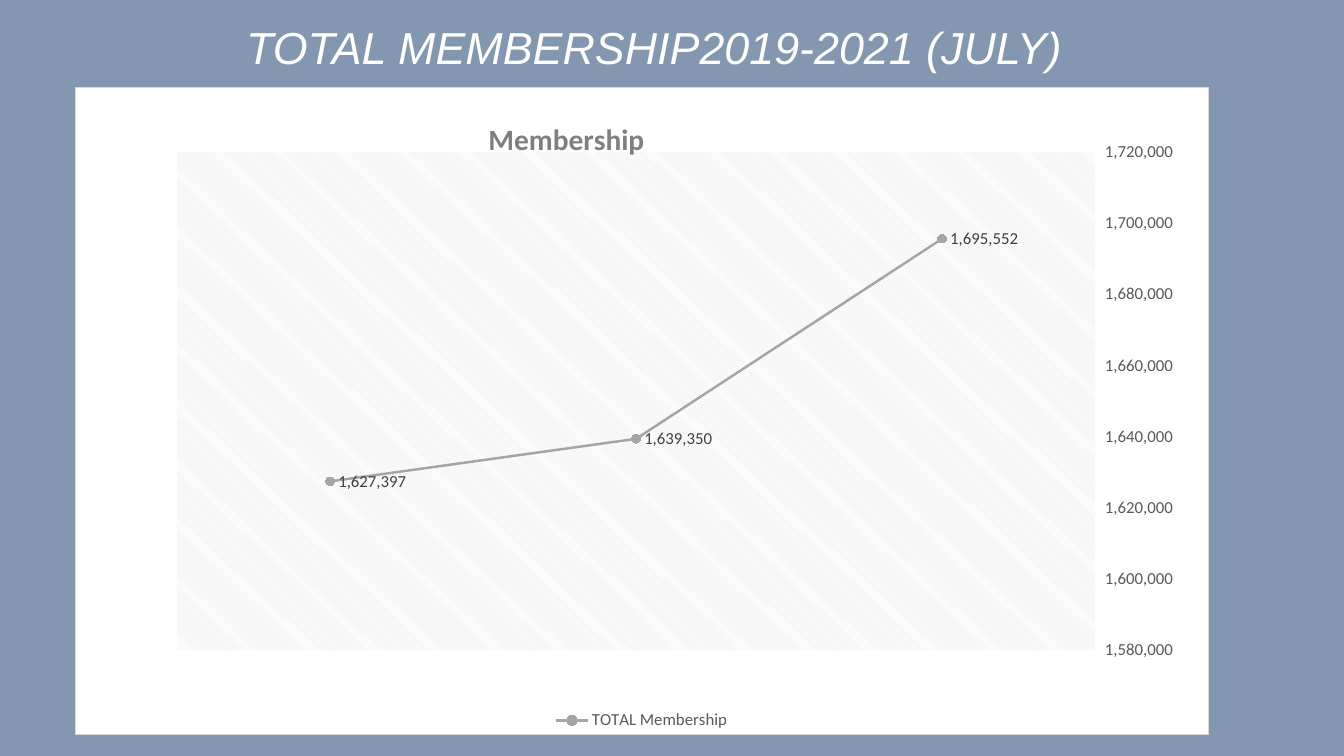
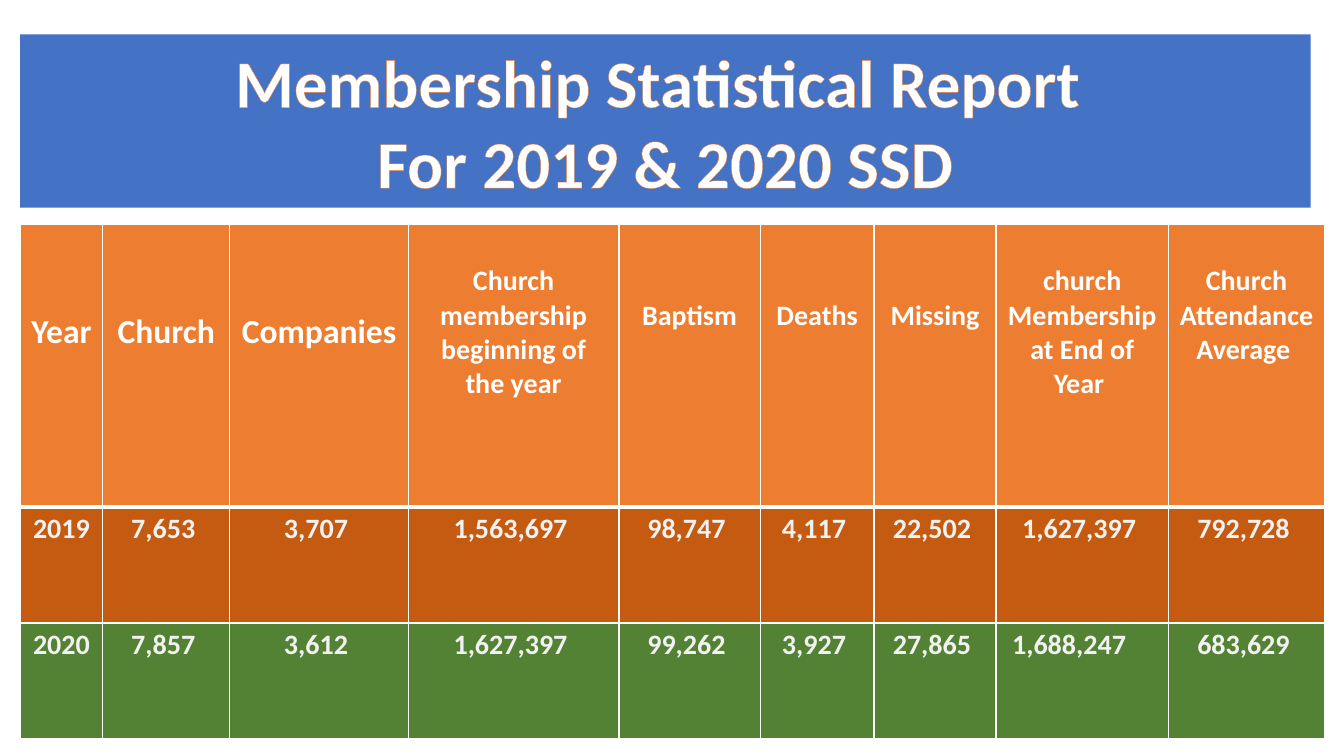
"""Builds two slides on church membership: a line chart and a table."""
import lxml.etree
import pptx
import pptx.chart.data
import pptx.dml.color
import pptx.enum.chart
import pptx.enum.text
import pptx.oxml
import pptx.oxml.ns
import pptx.util

Inches = pptx.util.Inches
Pt = pptx.util.Pt
RGB = pptx.dml.color.RGBColor
qn = pptx.oxml.ns.qn
ALIGN = pptx.enum.text.PP_ALIGN

SLATE = RGB(0x84, 0x97, 0xB0)
WHITE = RGB(0xFF, 0xFF, 0xFF)
PALE = RGB(0xF2, 0xF2, 0xF2)
BLUE = RGB(0x44, 0x72, 0xC4)
ORANGE = RGB(0xED, 0x7D, 0x31)
RUST = RGB(0xC5, 0x5A, 0x11)
GREEN = RGB(0x54, 0x82, 0x35)
SILVER = RGB(0xD9, 0xD9, 0xD9)
GREY = RGB(0xA5, 0xA5, 0xA5)
STEEL = RGB(0x7F, 0x7F, 0x7F)
SLUB = RGB(0x59, 0x59, 0x59)
DARK = RGB(0x40, 0x40, 0x40)
NUMBER = "#,##0"

WIDTHS = [0.82, 1.26, 1.77, 2.09, 1.4, 1.13, 1.21, 1.71, 1.55]
HEADS = [
    ("Year", 24, 0.86),
    ("Church", 24, 0.86),
    ("Companies", 24, 0.86),
    ("Church membership beginning of the year", 20, 0.39),
    ("Baptism", 20, 0.73),
    ("Deaths", 20, 0.73),
    ("Missing", 20, 0.73),
    ("church Membership at End of Year ", 20, 0.39),
    ("Church Attendance Average ", 20, 0.39),
]
YEARS = [
    (RUST, ["2019", "7,653", "3,707", "1,563,697", "98,747",
            "4,117", "22,502", "1,627,397", "792,728"]),
    (GREEN, ["2020", "7,857", "3,612", "1,627,397", "99,262",
             "3,927", "27,865", "1,688,247", "683,629"]),
]


def style(font, size, color, name="Calibri", bold=False, italic=False):
    """Set the look of a font."""
    font.name, font.size = name, Pt(size)
    font.bold, font.italic = bold, italic
    font.color.rgb = color


def solid(parent, color):
    """Add a solid fill element to a parent element."""
    fill = lxml.etree.SubElement(parent, qn("a:solidFill"))
    lxml.etree.SubElement(fill, qn("a:srgbClr")).set("val", str(color))


def add_title(slide, box, lines, space, **look):
    """Fill and place the title placeholder."""
    title = slide.shapes.title
    title.left, title.top, title.width, title.height = map(Inches, box)
    frame = title.text_frame
    frame.word_wrap = True
    frame.auto_size = pptx.enum.text.MSO_AUTO_SIZE.NONE
    frame.vertical_anchor = pptx.enum.text.MSO_ANCHOR.MIDDLE
    frame.text = "\n".join(lines)
    for para in frame.paragraphs:
        para.alignment = ALIGN.CENTER
        para.line_spacing = space
        style(para.font, color=WHITE, **look)
    return title


def outline(frame, color, width):
    """Draw a thin line round the letters of a text frame."""
    for para in frame.paragraphs:
        for run in para.runs:
            line = lxml.etree.Element(qn("a:ln"), w=str(Pt(width)))
            solid(line, color)
            run._r.get_or_add_rPr().insert(0, line)


def place(node, **spots):
    """Give a chart part a manual layout."""
    for old in node.findall(qn("c:layout")):
        node.remove(old)
    layout = lxml.etree.Element(qn("c:layout"))
    manual = lxml.etree.SubElement(layout, qn("c:manualLayout"))
    for key, value in spots.items():
        lxml.etree.SubElement(manual, qn("c:" + key)).set("val", str(value))
    text = node.find(qn("c:tx"))
    if text is None:
        node.insert(0, layout)
    else:
        text.addnext(layout)


def paint(chart):
    """Fill the chart and hatch its plot area."""
    root = chart._chartSpace
    back = lxml.etree.Element(qn("c:spPr"))
    solid(back, WHITE)
    line = lxml.etree.SubElement(back, qn("a:ln"), w=str(Pt(0.75)))
    solid(line, SILVER)
    root.find(qn("c:chart")).addnext(back)
    area = root.find(".//" + qn("c:plotArea"))
    place(area, layoutTarget="inner", xMode="edge", yMode="edge",
          x=0.09, y=0.1, w=0.81, h=0.77)
    plot = lxml.etree.SubElement(area, qn("c:spPr"))
    hatch = lxml.etree.SubElement(plot, qn("a:pattFill"), prst="ltDnDiag")
    for tag, color in (("a:fgClr", SILVER), ("a:bgClr", WHITE)):
        part = lxml.etree.SubElement(hatch, qn(tag))
        lxml.etree.SubElement(part, qn("a:srgbClr")).set("val", str(color))


def draw_line(series):
    """Format the line, markers and labels of a series."""
    enum = pptx.enum.chart
    series.smooth = False
    series.format.line.color.rgb = GREY
    series.format.line.width = Pt(1.75)
    mark = series.marker
    mark.style, mark.size = enum.XL_MARKER_STYLE.CIRCLE, 6
    mark.format.fill.solid()
    mark.format.fill.fore_color.rgb = GREY
    mark.format.line.color.rgb = GREY
    labels = series.data_labels
    labels.show_value = True
    labels.position = enum.XL_LABEL_POSITION.RIGHT
    labels.number_format, labels.number_format_is_linked = NUMBER, False
    style(labels.font, 12, DARK)


def add_chart(slide):
    """Add the membership line chart."""
    enum = pptx.enum.chart
    data = pptx.chart.data.CategoryChartData()
    data.categories = ["1", "2", "3"]
    data.add_series("TOTAL Membership", [1627397, 1639350, 1695552])
    chart = slide.shapes.add_chart(
        enum.XL_CHART_TYPE.LINE_MARKERS, Inches(0.74), Inches(0.86),
        Inches(11.25), Inches(6.43), data).chart
    style(chart.font, 12, SLUB)
    chart.has_title = True
    title = chart.chart_title
    title.text_frame.text = "Membership"
    style(title.text_frame.paragraphs[0].font, 21, STEEL, bold=True)
    place(title._element, xMode="edge", yMode="edge", x=0.36, y=0.04)
    chart.has_legend = True
    chart.legend.position = enum.XL_LEGEND_POSITION.BOTTOM
    chart.legend.include_in_layout = False
    style(chart.legend.font, 12, SLUB)
    chart.category_axis.visible = False
    axis = chart.value_axis
    axis.has_major_gridlines = False
    axis.minimum_scale, axis.maximum_scale = 1580000, 1720000
    axis.major_unit = 20000
    axis.major_tick_mark = enum.XL_TICK_MARK.NONE
    axis.tick_label_position = enum.XL_TICK_LABEL_POSITION.HIGH
    axis.format.line.fill.background()
    ticks = axis.tick_labels
    ticks.number_format, ticks.number_format_is_linked = NUMBER, False
    style(ticks.font, 12, SLUB)
    chart.plots[0].vary_by_categories = False
    draw_line(chart.plots[0].series[0])
    paint(chart)


def fill_cell(cell, text, size, color, back, top=1, bottom=1):
    """Write one cell and set its borders and fill."""
    props = cell._tc.get_or_add_tcPr()
    sides = (("L", 1), ("R", 1), ("T", top), ("B", bottom))
    for side, width in sides:
        line = lxml.etree.SubElement(props, qn("a:ln" + side),
                                     w=str(Pt(width)))
        solid(line, WHITE)
    cell.fill.solid()
    cell.fill.fore_color.rgb = back
    cell.text = text
    para = cell.text_frame.paragraphs[0]
    para.alignment = ALIGN.CENTER
    style(para.font, size, color, bold=True)


def add_table(slide):
    """Add the table of yearly figures."""
    heights = [2.8, 1.15, 1.15]
    table = slide.shapes.add_table(
        len(heights), len(WIDTHS), Inches(0.2), Inches(2.23),
        Inches(sum(WIDTHS)), Inches(sum(heights))).table
    for row, height in zip(table.rows, heights):
        row.height = Inches(height)
    for col, (width, head) in enumerate(zip(WIDTHS, HEADS)):
        table.columns[col].width = Inches(width)
        text, size, drop = head
        cell = table.cell(0, col)
        fill_cell(cell, text, size, WHITE, ORANGE, bottom=3)
        cell.margin_top = Inches(drop)
        if width > 2:
            cell.margin_left = cell.margin_right = Inches(0.13)
    for row, (back, values) in enumerate(YEARS, 1):
        for col, text in enumerate(values):
            cell = table.cell(row, col)
            fill_cell(cell, text, 20, PALE, back, top=3 if row == 1 else 1)
            if col:
                cell.margin_right = Inches(0.16)
    last = table.cell(2, 7)
    last.margin_left = Inches(0.16)
    last.text_frame.paragraphs[0].alignment = ALIGN.LEFT


def add_slide(deck, back):
    """Add a slide with a title and a plain background."""
    slide = deck.slides.add_slide(deck.slide_layouts[5])
    slide.background.fill.solid()
    slide.background.fill.fore_color.rgb = back
    return slide


def main():
    """Build and save the deck."""
    deck = pptx.Presentation()
    deck.slide_width, deck.slide_height = Inches(13.33), Inches(7.5)

    slide = add_slide(deck, SLATE)
    add_title(slide, (0.74, -0.23, 11.5, 1.45),
              ["TOTAL MEMBERSHIP2019-2021 (JULY)"], 0.9,
              size=32, name="Arial", italic=True)
    add_chart(slide)

    slide = add_slide(deck, WHITE)
    band = add_title(slide, (0.2, 0.34, 12.8, 1.72),
                     ["Membership Statistical Report ",
                      "For 2019 & 2020 SSD"], 1.0, size=48, bold=True)
    band.fill.solid()
    band.fill.fore_color.rgb = BLUE
    outline(band.text_frame, ORANGE, 0.52)
    add_table(slide)
    deck.save("out.pptx")


if __name__ == "__main__":
    main()
